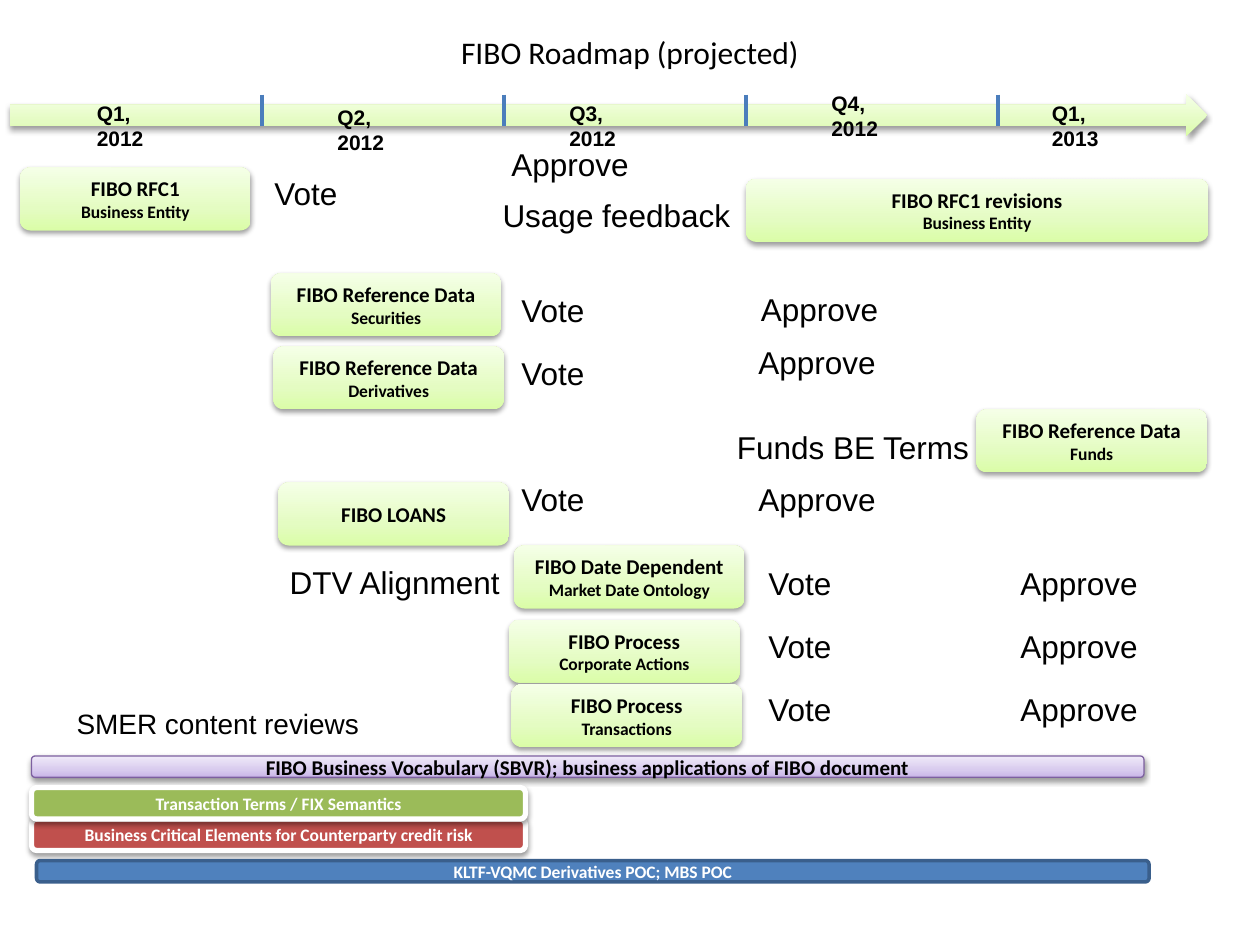
"""Build the FIBO roadmap slide: a quarterly timeline with deliverables, milestones and workstream bars."""
from pptx import Presentation, oxml, util as u
from pptx.dml import color
from pptx.enum import shapes, text
from pptx.oxml import ns

COLORS = {
    "black": "000000", "white": "FFFFFF", "tick": "4B7EBC",
    "purple_line": "7D60A0", "red": "C0504D", "green": "9BBB59",
    "blue": "4F81BD", "blue_line": "3A5F8C",
}
GRADIENTS = {
    "lime": ("DAFDA7", "E4FCC2", "F5FFE7"),
    "lilac": ("C9B5E8", "D8CBEE", "F0EAF9"),
}


def write(shape, lines, font, ink, bold=False, align=text.PP_ALIGN.LEFT):
    """Fill a shape with (wording, size) lines in one font."""
    frame = shape.text_frame
    frame.text = "\n".join(wording for wording, size in lines)
    for para, (wording, size) in zip(frame.paragraphs, lines):
        para.alignment = align
        for span in para.runs:
            span.font.name = font
            span.font.size = u.Pt(size)
            span.font.bold = bold
            span.font.color.rgb = color.RGBColor.from_string(COLORS[ink])


def add_block(kind, place, fill, line=None, width=0, shadow=True):
    """Add a preset shape with a plain or gradient fill and an optional soft shadow."""
    block = page.shapes.add_shape(kind, *map(u.Inches, place))
    properties = block.element.spPr
    if fill in GRADIENTS:
        block.fill.gradient()
        stops = "".join(
            f'<a:gs pos="{position}"><a:srgbClr val="{value}"/></a:gs>'
            for position, value in zip((0, 35000, 100000), GRADIENTS[fill]))
        properties.replace(properties.find(ns.qn("a:gradFill")), oxml.parse_xml(
            f'<a:gradFill {ns.nsdecls("a")} rotWithShape="1"><a:gsLst>{stops}</a:gsLst>'
            '<a:lin ang="16200000" scaled="0"/></a:gradFill>'))
    else:
        block.fill.solid()
        block.fill.fore_color.rgb = color.RGBColor.from_string(COLORS[fill])
    if line:
        block.line.color.rgb = color.RGBColor.from_string(COLORS[line])
        block.line.width = u.Pt(width)
    else:
        block.line.fill.background()
    block.shadow.inherit = False
    if shadow:
        properties.find(ns.qn("a:effectLst")).append(oxml.parse_xml(
            f'<a:outerShdw {ns.nsdecls("a")} blurRad="40000" dist="20000" dir="5400000" '
            'rotWithShape="0"><a:srgbClr val="000000"><a:alpha val="38000"/></a:srgbClr>'
            '</a:outerShdw>'))
    block.text_frame.vertical_anchor = text.MSO_ANCHOR.MIDDLE
    block.text_frame.word_wrap = True
    return block


deck = Presentation()
deck.slide_width, deck.slide_height = u.Inches(10), u.Inches(7.5)
page = deck.slides.add_slide(deck.slide_layouts[5])

title = page.shapes.title
title.left, title.top = u.Inches(0.75), u.Inches(0.25)
title.width, title.height = u.Inches(8.5), u.Inches(0.33)
title.text_frame.vertical_anchor = text.MSO_ANCHOR.MIDDLE
write(title, [("FIBO Roadmap (projected)", 18)], "Calibri", "black", align=text.PP_ALIGN.CENTER)

add_block(shapes.MSO_SHAPE.RIGHT_ARROW, (0.08, 0.75, 9.5, 0.33), "lime")

for left in (2.08, 4, 5.92, 7.92):
    tick = page.shapes.add_connector(
        shapes.MSO_CONNECTOR.STRAIGHT, u.Inches(left), u.Inches(0.75), u.Inches(left), u.Inches(1))
    tick.line.color.rgb = color.RGBColor.from_string(COLORS["tick"])
    tick.line.width = u.Pt(2.25)
    tick.element.spPr.append(oxml.parse_xml(f'<a:effectLst {ns.nsdecls("a")}/>'))

quarters = [
    ("Q1, 2012", 0.67, 0.75), ("Q2, 2012", 2.58, 0.78), ("Q3, 2012", 4.42, 0.75),
    ("Q4, 2012", 6.5, 0.67), ("Q1, 2013", 8.25, 0.75),
]
for wording, left, top in quarters:
    box = page.shapes.add_textbox(u.Inches(left), u.Inches(top), u.Inches(0.83), u.Inches(0.3))
    box.text_frame.word_wrap = True
    write(box, [(wording, 12)], "Arial", "black", bold=True)

cards = [
    (0.16, 1.33, 1.83, "FIBO RFC1", "Business Entity"),
    (5.92, 1.42, 3.67, "FIBO RFC1 revisions", "Business Entity"),
    (2.15, 2.17, 1.83, "FIBO Reference Data", "Securities"),
    (2.17, 2.75, 1.83, "FIBO Reference Data", "Derivatives"),
    (7.75, 3.25, 1.83, "FIBO Reference Data", "Funds"),
    (2.21, 3.83, 1.83, "FIBO LOANS", None),
    (4.08, 4.33, 1.83, "FIBO Date Dependent", "Market Date Ontology"),
    (4.04, 4.92, 1.83, "FIBO Process", "Corporate Actions"),
    (4.06, 5.43, 1.83, "FIBO Process", "Transactions"),
]
for left, top, width, name, topic in cards:
    card = add_block(shapes.MSO_SHAPE.ROUNDED_RECTANGLE, (left, top, width, 0.5), "lime")
    lines = [(name, 12)] + ([(topic, 10)] if topic else [])
    write(card, lines, "Calibri", "black", bold=True, align=text.PP_ALIGN.CENTER)

bars = [
    ((0.25, 6, 8.83, 0.17), "lilac", "purple_line", 0.75, True, "black", 12,
     "FIBO Business Vocabulary (SBVR); business applications of FIBO document"),
    ((0.25, 6.5, 3.92, 0.25), "red", "white", 3, True, "white", 10,
     "Business Critical Elements for Counterparty credit risk"),
    ((0.29, 6.83, 8.83, 0.17), "blue", "blue_line", 2, False, "white", 10,
     "KLTF-VQMC Derivatives POC; MBS POC"),
    ((0.25, 6.25, 3.92, 0.25), "green", "white", 3, True, "white", 10,
     "Transaction Terms / FIX Semantics"),
]
for place, fill, line, width, shadow, ink, size, wording in bars:
    bar = add_block(shapes.MSO_SHAPE.ROUNDED_RECTANGLE, place, fill, line, width, shadow)
    write(bar, [(wording, size)], "Calibri", ink, bold=True, align=text.PP_ALIGN.CENTER)

milestones = [
    ("Vote", 0.71, 18, [(2.08, 1.33), (4.04, 2.26), (4.04, 2.76), (4.04, 3.76),
                        (6, 4.43), (6, 4.93), (6, 5.43)]),
    ("Approve", 1.14, 18, [(3.96, 1.1), (5.94, 2.25), (5.92, 2.67), (5.92, 3.76),
                           (8, 4.43), (8, 4.93), (8, 5.43)]),
    ("Usage feedback", 2.03, 18, [(3.89, 1.51)]),
    ("Funds BE Terms", 2.06, 18, [(5.75, 3.35)]),
    ("DTV Alignment", 1.88, 18, [(2.2, 4.42)]),
    ("SMER content reviews", 2.91, 16, [(0.51, 5.56)]),
]
for wording, width, size, corners in milestones:
    for left, top in corners:
        box = page.shapes.add_textbox(u.Inches(left), u.Inches(top), u.Inches(width), u.Inches(0.4))
        box.text_frame.word_wrap = size == 16
        write(box, [(wording, size)], "Arial", "black")

deck.save("out.pptx")
